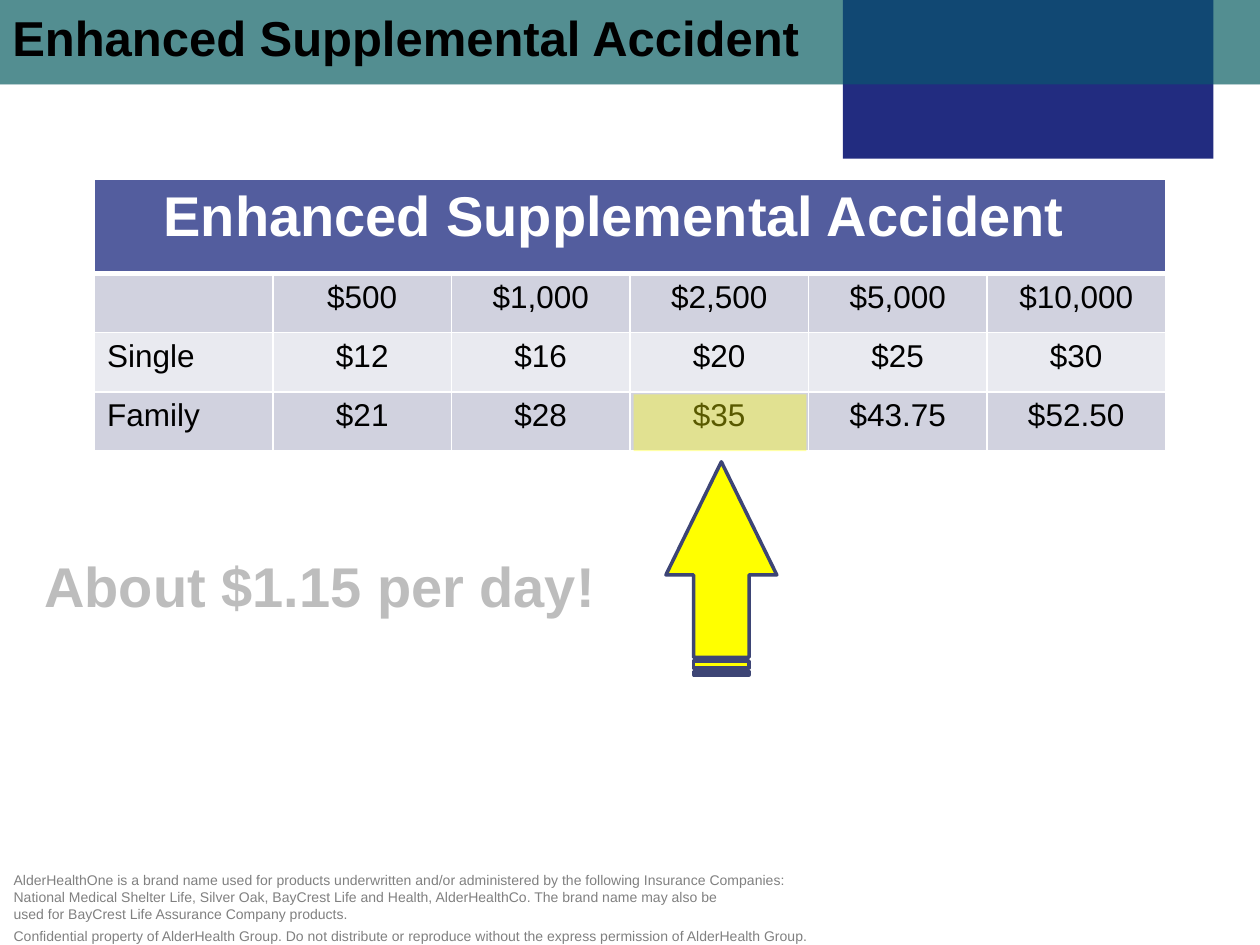
from dataclasses import dataclass

from lxml import etree
from pptx import Presentation
from pptx.dml.color import RGBColor
from pptx.enum import shapes, text
from pptx.oxml import ns
from pptx.util import Inches, Pt


@dataclass(frozen=True)
class Theme:
    """Colours, font and type sizes of the deck."""
    font: str = "Arial"
    white: str = "FFFFFF"
    black: str = "000000"
    band: str = "A3B5BC"
    teal: str = "006666"
    navy: str = "222C80"
    header: str = "535D9E"
    row_dark: str = "D1D2DF"
    row_light: str = "E9EAF0"
    yellow: str = "FFFF00"
    outline: str = "3D4575"
    callout: str = "BDBDBD"
    footer: str = "808080"
    title_size: int = 28
    large_size: int = 32
    table_size: int = 18
    footer_size: int = 8


THEME = Theme()
PRICES = [
    ["", "$500", "$1,000", "$2,500", "$5,000", "$10,000"],
    ["Single", "$12", "$16", "$20", "$25", "$30"],
    ["Family", "$21", "$28", "$35", "$43.75", "$52.50"],
]
DISCLAIMER = [
    "AlderHealthOne is a brand name used for products underwritten and/or administered by the following Insurance Companies:",
    "National Medical Shelter Life, Silver Oak, BayCrest Life and Health, AlderHealthCo. The brand name may also be",
    "used for BayCrest Life Assurance Company products.",
]
CONFIDENTIAL = (
    "Confidential property of AlderHealth Group. Do not distribute or reproduce "
    "without the express permission of AlderHealth Group."
)


def style_text(frame, size, color, bold=False, align=text.PP_ALIGN.LEFT):
    """Give every paragraph and run of a frame the same look."""
    for para in frame.paragraphs:
        para.alignment = align
        para.font.size = Pt(size)
        for span in para.runs:
            span.font.name = THEME.font
            span.font.size = Pt(size)
            span.font.bold = bold
            span.font.color.rgb = RGBColor.from_string(color)


def add_block(page, kind, box, color, alpha=None):
    """Add a flat filled shape, see-through when alpha is a percentage."""
    block = page.shapes.add_shape(kind, *map(Inches, box))
    block.shadow.inherit = False
    block.line.fill.background()
    block.fill.solid()
    block.fill.fore_color.rgb = RGBColor.from_string(color)
    if alpha is not None:
        tint = block.fill._xPr.find(".//" + ns.qn("a:srgbClr"))
        etree.SubElement(tint, ns.qn("a:alpha"), val=str(alpha * 1000))
    return block


def add_text(page, box, words, **look):
    """Add a text box with one look throughout."""
    label = page.shapes.add_textbox(*map(Inches, box))
    label.text_frame.word_wrap = True
    label.text_frame.text = words
    style_text(label.text_frame, **look)


def add_header(page, box):
    """Draw the title band with the navy block that hangs from it."""
    left, top, width, height = box
    rectangle = shapes.MSO_SHAPE.RECTANGLE
    add_block(page, rectangle, box, THEME.band)
    add_block(page, rectangle, (left + 6.69, top, 2.94, 1.26), THEME.navy)
    title = add_block(page, rectangle, box, THEME.teal, alpha=49)
    frame = title.text_frame
    frame.vertical_anchor = text.MSO_ANCHOR.MIDDLE
    frame.margin_bottom = Inches(0.14)
    frame.text = "Enhanced Supplemental Accident"
    style_text(frame, THEME.title_size, THEME.black, bold=True)


def add_border(cell, side, points):
    """Draw a white line on one side of a cell."""
    props = cell._tc.get_or_add_tcPr()
    line = etree.Element(ns.qn(f"a:ln{side}"), w=str(Pt(points)))
    fill = etree.SubElement(line, ns.qn("a:solidFill"))
    etree.SubElement(fill, ns.qn("a:srgbClr"), val=THEME.white)
    props.insert(len(props.findall("*")) - 1, line)


def fill_cell(cell, color, bottom=1):
    """Fill a cell and draw its four borders."""
    cell.fill.solid()
    cell.fill.fore_color.rgb = RGBColor.from_string(color)
    for side in "LRTB":
        add_border(cell, side, bottom if side == "B" else 1)


def add_price_table(page, box):
    """Place the price table under its merged heading."""
    left, top, width, height = box
    columns = len(PRICES[0])
    table = page.shapes.add_table(len(PRICES) + 1, columns, *map(Inches, box)).table
    heading_height = 0.75
    for column in table.columns:
        column.width = Inches(width / columns)
    for row in table.rows:
        row.height = Inches((height - heading_height) / len(PRICES))
    table.rows[0].height = Inches(heading_height)

    heading = table.cell(0, 0)
    heading.merge(table.cell(0, columns - 1))
    for index in range(columns):
        fill_cell(table.cell(0, index), THEME.header, bottom=3)
    heading.text_frame.text = "Enhanced Supplemental Accident"
    heading.margin_right = Inches(0.35)
    style_text(heading.text_frame, THEME.large_size, THEME.white, True, text.PP_ALIGN.CENTER)

    for row, values in enumerate(PRICES, start=1):
        for column, value in enumerate(values):
            cell = table.cell(row, column)
            fill_cell(cell, THEME.row_dark if row % 2 else THEME.row_light)
            cell.text_frame.text = value
            align = text.PP_ALIGN.CENTER if column else text.PP_ALIGN.LEFT
            style_text(cell.text_frame, THEME.table_size, THEME.black, align=align)


def add_callout(page, box):
    """Point at the highlighted price and state its daily cost."""
    left, top, width, height = box
    arrow = add_block(page, shapes.MSO_SHAPE.STRIPED_RIGHT_ARROW,
                      (left + 4.88, top + 0.94, 1.69, 0.88), THEME.yellow)
    arrow.rotation = 270
    arrow.adjustments[0] = 0.5
    arrow.adjustments[1] = 1.02
    arrow.line.color.rgb = RGBColor.from_string(THEME.outline)
    arrow.line.width = Pt(2)
    add_text(page, (left, top + 1.2, 5.08, 0.64), "About $1.15 per day!",
             size=THEME.large_size, color=THEME.callout, bold=True,
             align=text.PP_ALIGN.CENTER)
    add_block(page, shapes.MSO_SHAPE.RECTANGLE,
              (left + 5.03, top, 1.37, 0.45), THEME.yellow, alpha=35)


def add_footer(page, box):
    """Place the confidentiality line below the brand disclaimer."""
    left, top, width, height = box
    look = dict(size=THEME.footer_size, color=THEME.footer)
    add_text(page, (left, top + 0.44, width, 0.24), CONFIDENTIAL, **look)
    add_text(page, (left, top, width, 0.5), "\n".join(DISCLAIMER), **look)


def main():
    """Build the slide and save the deck."""
    deck = Presentation()
    deck.slide_width, deck.slide_height = Inches(10), Inches(7.5)
    page = deck.slides.add_slide(deck.slide_layouts[6])
    add_footer(page, (0.01, 6.87, 7.2, 0.68))
    add_header(page, (0, 0, 10, 0.67))
    add_price_table(page, (0.75, 1.42, 8.5, 2.16))
    add_callout(page, (0, 3.13, 6.57, 2.25))
    deck.save("out.pptx")


if __name__ == "__main__":
    main()
